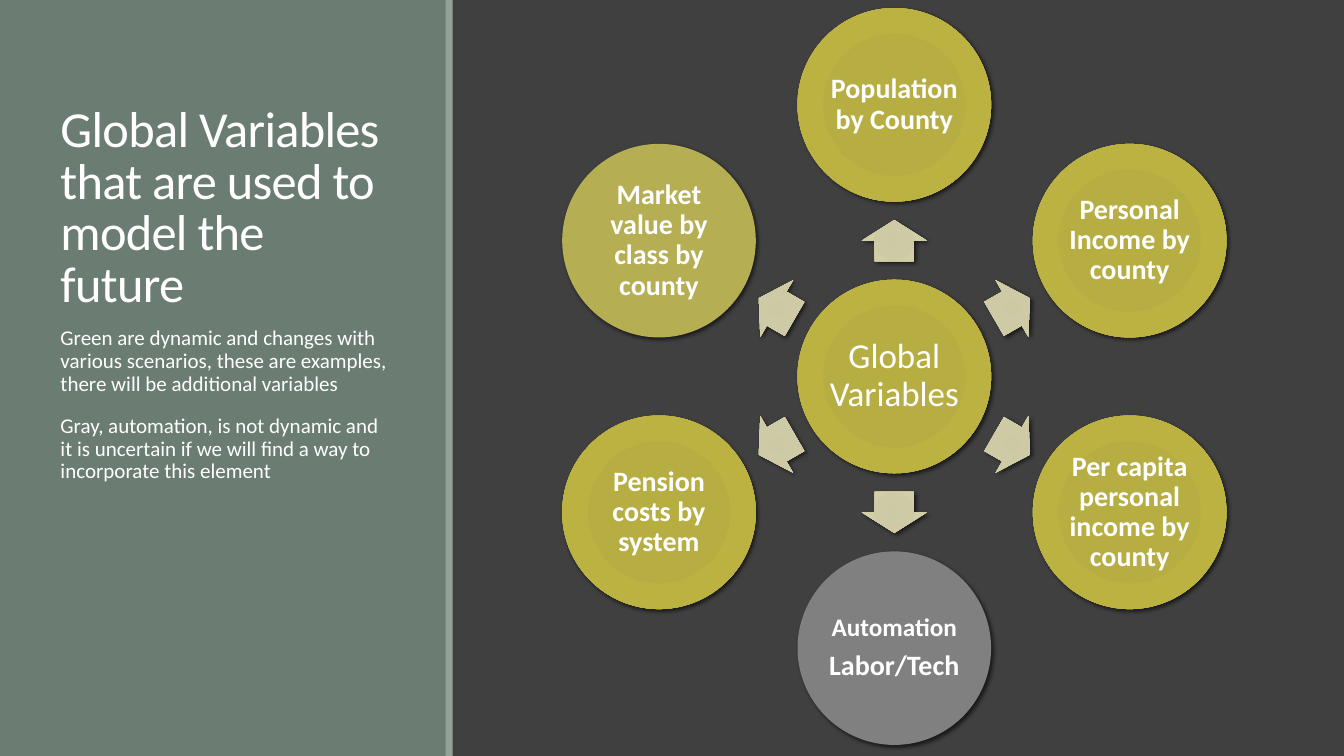
import math

import pptx
import pptx.dml.color
import pptx.enum.shapes
import pptx.enum.text
import pptx.oxml
import pptx.oxml.ns
import pptx.util

Inches = pptx.util.Inches
Pt = pptx.util.Pt
RGB = pptx.dml.color.RGBColor
SHAPE = pptx.enum.shapes.MSO_SHAPE
ANCHOR = pptx.enum.text.MSO_ANCHOR

FONT = "Calibri"
WHITE = RGB(0xFF, 0xFF, 0xFF)
BLACK = RGB(0x00, 0x00, 0x00)
BACKGROUND = RGB(0x40, 0x40, 0x40)
PANEL = RGB(0x6B, 0x7D, 0x72)
STRIPE = RGB(0x93, 0xA2, 0x99)
GRAY = RGB(0x80, 0x80, 0x80)
OLIVE = RGB(0xB5, 0xAE, 0x53)
GREEN = [(0, RGB(0xB6, 0xAE, 0x40)), (34, RGB(0xB6, 0xAE, 0x43)),
         (70, RGB(0xBB, 0xB2, 0x41)), (100, RGB(0xBA, 0xB2, 0x4E))]
SAND = [(0, RGB(0xCD, 0xC9, 0xA2)), (34, RGB(0xCE, 0xCA, 0xA5)),
        (70, RGB(0xD2, 0xCE, 0xA6)), (100, RGB(0xD8, 0xD5, 0xB2))]

# Clockwise from the top: fill and (text, size) paragraphs
VARIABLES = [
    (GREEN, [("Population by County", 20)]),
    (GREEN, [("Personal Income by county", 20)]),
    (GREEN, [("Per capita personal income by county", 20)]),
    (GRAY, [("Automation", 18), ("Labor/Tech", 20)]),
    (GREEN, [("Pension costs by system", 20)]),
    (OLIVE, [("Market value by class by county", 20)]),
]
TITLE = "Global Variables that are used to model the future"
NOTES = [
    "Green are dynamic and changes with various scenarios, these are examples, "
    "there will be additional variables",
    "Gray, automation, is not dynamic and it is uncertain if we will find a way "
    "to incorporate this element",
]


def place(sp, left, top, width, height):
    sp.left, sp.top = Inches(left), Inches(top)
    sp.width, sp.height = Inches(width), Inches(height)


def add_text(p, text, size, bold=False):
    r = p.add_run()
    r.text = text
    r.font.name = FONT
    r.font.size = Pt(size)
    r.font.bold = bold
    r.font.color.rgb = WHITE
    return r


def paint(sp, fill):
    """Fill without outline or shadow; a list of stops gives a circular gradient."""
    sp.line.fill.background()
    sp.shadow.inherit = False
    if not isinstance(fill, list):
        sp.fill.solid()
        sp.fill.fore_color.rgb = fill
        return
    stops = "".join(f'<a:gs pos="{pos * 1000}"><a:srgbClr val="{color}"/></a:gs>'
                    for pos, color in fill)
    gradient = pptx.oxml.parse_xml(
        f'<a:gradFill {pptx.oxml.ns.nsdecls("a")} rotWithShape="1">'
        f'<a:gsLst>{stops}</a:gsLst><a:path path="circle">'
        '<a:fillToRect l="100000" t="100000" r="100000" b="100000"/>'
        '</a:path></a:gradFill>')
    sp._element.spPr.find(pptx.oxml.ns.qn("a:ln")).addprevious(gradient)


def cast_shadow(sp):
    effects = sp._element.spPr.find(pptx.oxml.ns.qn("a:effectLst"))
    effects.append(pptx.oxml.parse_xml(
        f'<a:outerShdw {pptx.oxml.ns.nsdecls("a")} blurRad="{Pt(3)}" '
        f'dist="{Pt(2)}" dir="2700000" rotWithShape="0">'
        f'<a:srgbClr val="{BLACK}"><a:alpha val="60000"/></a:srgbClr></a:outerShdw>'))


def add_centred(s, kind, cx, cy, width, height, fill):
    sp = s.shapes.add_shape(kind, Inches(cx - width / 2), Inches(cy - height / 2),
                            Inches(width), Inches(height))
    paint(sp, fill)
    cast_shadow(sp)
    return sp


def add_circle(s, cx, cy, diameter, fill, lines, bold=True):
    sp = add_centred(s, SHAPE.OVAL, cx, cy, diameter, diameter, fill)
    tf = sp.text_frame
    tf.word_wrap = True
    tf.vertical_anchor = ANCHOR.MIDDLE
    tf.margin_left = tf.margin_right = tf.margin_top = tf.margin_bottom = Inches(0.03)
    for i, (text, size) in enumerate(lines):
        p = tf.add_paragraph() if i else tf.paragraphs[0]
        p.alignment = pptx.enum.text.PP_ALIGN.CENTER
        p.line_spacing = 0.9
        p.space_before = Pt(6 if i else 0)
        add_text(p, text, size, bold)


def add_arrow(s, cx, cy, degrees):
    sp = add_centred(s, SHAPE.RIGHT_ARROW, cx, cy, 0.41, 0.65, SAND)
    sp.adjustments[0] = 0.6
    sp.adjustments[1] = 0.5
    sp.rotation = degrees % 360


def build_wheel(s, left, top, width, height):
    """Hub with six variables around it, each one pointed at by an arrow."""
    diameter = 1.92
    cx, cy = left + width / 2, top + height / 2
    ring = (height - diameter) / 2
    add_circle(s, cx, cy, diameter, GREEN, [("Global Variables", 25)], bold=False)
    for i, (fill, lines) in enumerate(VARIABLES):
        degrees = i * 360 / len(VARIABLES) - 90
        dx, dy = math.cos(math.radians(degrees)), math.sin(math.radians(degrees))
        add_arrow(s, cx + dx * ring / 2, cy + dy * ring / 2, degrees)
        add_circle(s, cx + dx * ring, cy + dy * ring, diameter, fill, lines)


def build_panel(s, left, top, width, height):
    bands = [(left, width, PANEL), (left + width - 0.01, 0.07, STRIPE)]
    for i, (x, w, color) in enumerate(bands):
        sp = s.shapes.add_shape(SHAPE.RECTANGLE, Inches(x), Inches(top),
                                Inches(w), Inches(height))
        paint(sp, color)
        s.shapes._spTree.insert(2 + i, sp._element)  # behind the placeholders

    title = s.shapes.title
    place(title, left + 0.5, top + 0.65, 3.5, 2.5)
    tf = title.text_frame
    tf.word_wrap = True
    tf.auto_size = pptx.enum.text.MSO_AUTO_SIZE.NONE
    tf.vertical_anchor = ANCHOR.BOTTOM
    p = tf.paragraphs[0]
    p.alignment = pptx.enum.text.PP_ALIGN.LEFT
    p.line_spacing = 0.85
    r = add_text(p, TITLE, 36)
    r.font._element.set("spc", "-50")

    body = s.placeholders[2]
    place(body, left + 0.5, top + 3.2, 3.5, 3.7)
    tf = body.text_frame
    tf.word_wrap = True
    tf.auto_size = pptx.enum.text.MSO_AUTO_SIZE.NONE
    for i, note in enumerate(NOTES):
        p = tf.add_paragraph() if i else tf.paragraphs[0]
        p.line_spacing = 0.9
        p.space_before, p.space_after = Pt(12), Pt(2)
        add_text(p, note, 15)


def main():
    prs = pptx.Presentation()
    prs.slide_width, prs.slide_height = Inches(13.33), Inches(7.5)
    s = prs.slides.add_slide(prs.slide_layouts.get_by_name("Content with Caption"))
    s.background.fill.solid()
    s.background.fill.fore_color.rgb = BACKGROUND
    content = s.placeholders[1]._element
    content.getparent().remove(content)
    build_panel(s, 0, 0, 4.43, 7.5)
    build_wheel(s, 5.58, 0.08, 6.58, 7.31)
    prs.save("out.pptx")


if __name__ == "__main__":
    main()
